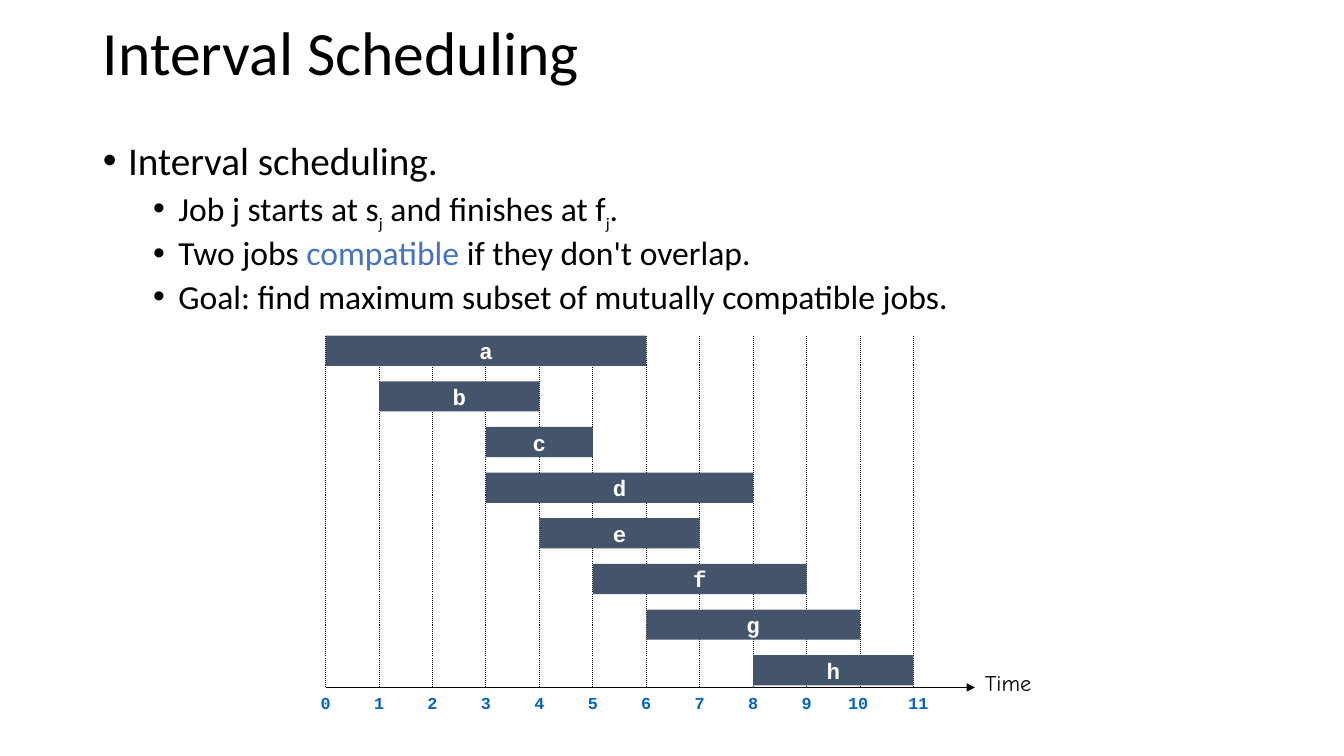
"""Build the Interval Scheduling slide with its job timeline."""
from lxml.etree import SubElement
from pptx import Presentation
from pptx.dml.color import RGBColor
from pptx.enum.dml import MSO_LINE
from pptx.enum.shapes import MSO_CONNECTOR as Link, MSO_SHAPE as Preset
from pptx.enum.text import MSO_ANCHOR as Anchor, MSO_AUTO_SIZE as Fit, PP_ALIGN as Align
from pptx.oxml.ns import qn
from pptx.util import Inches, Pt

COLORS = {"ink": "000000", "accent": "4472C4", "tick": "0563C1", "bar": "44546A", "label": "FFFFFF"}
WIDTH, HEIGHT = 13.33, 7.5
CHART_LEFT, CHART_TOP, COLUMN = 3.23, 3.33, 0.53
ROW = (6.5 - CHART_TOP) / 7
AXIS_ROW = (6.82 - CHART_TOP) / ROW
BAR_ROWS = 0.3 / ROW
JOBS = {"a": (0, 6), "b": (1, 4), "c": (3, 5), "d": (3, 8),
        "e": (4, 7), "f": (5, 9), "g": (6, 10), "h": (8, 11)}
LAST_TIME = max(finish for _, finish in JOBS.values())
POINTS = [
    (0, [("Interval scheduling.", "ink", False)]),
    (1, [("Job j starts at s", "ink", False), ("j", "ink", True),
         (" and finishes at f", "ink", False), ("j", "ink", True), (".", "ink", False)]),
    (1, [("Two jobs ", "ink", False), ("compatible ", "accent", False),
         ("if they don't overlap.", "ink", False)]),
    (1, [("Goal: find maximum subset of mutually compatible jobs.", "ink", False)]),
]


class TimelineSlide:
    """Holds the slide, its style and the timeline grid."""

    def __init__(self, deck):
        self.slide = deck.slides.add_slide(deck.slide_layouts[1])
        self.shapes = self.slide.shapes

    def color(self, name):
        return RGBColor.from_string(COLORS[name])

    def point(self, column, row):
        return Inches(CHART_LEFT + column * COLUMN), Inches(CHART_TOP + row * ROW)

    def cell(self, column, row, columns, rows):
        return *self.point(column, row), Inches(columns * COLUMN), Inches(rows * ROW)

    def add_words(self, paragraph, words, size, color="ink", font="Calibri", bold=False):
        run = paragraph.add_run()
        run.text = words
        run.font.size, run.font.name, run.font.bold = Pt(size), font, bold
        run.font.color.rgb = self.color(color)
        return run

    def place(self, holder, left, top, width, height):
        holder.left, holder.width = Inches(left * WIDTH / 100), Inches(width * WIDTH / 100)
        holder.top, holder.height = Inches(top * HEIGHT / 100), Inches(height * HEIGHT / 100)
        holder.text_frame.auto_size = Fit.NONE
        return holder.text_frame

    def title(self, words):
        heading = self.place(self.shapes.title, 6.9, 1.73, 86.27, 11.2)
        heading.vertical_anchor = Anchor.MIDDLE
        line = heading.paragraphs[0]
        line.alignment, line.line_spacing = Align.LEFT, 0.9
        self.add_words(line, words, 44)

    def bullets(self, points):
        body = self.place(self.slide.placeholders[1], 6.9, 18, 86.27, 63.47)
        for index, (level, pieces) in enumerate(points):
            item = body.add_paragraph() if index else body.paragraphs[0]
            item.level, item.line_spacing = level, 0.9
            item.space_before = Pt(5 if level else 10)
            layout = item._p.get_or_add_pPr()
            layout.set("marL", str(Inches(0.25 + 0.5 * level)))
            layout.set("indent", str(Inches(-0.25)))
            SubElement(layout, qn("a:buFont")).set("typeface", "Arial")
            SubElement(layout, qn("a:buChar")).set("char", "•")
            for words, color, subscript in pieces:
                size = 20 if subscript else 24 if level else 28
                run = self.add_words(item, words, size, color)
                if subscript:
                    run._r.get_or_add_rPr().set("baseline", "-25000")

    def line(self, start, end, weight, dotted=False, arrow=False):
        rule = self.shapes.add_connector(Link.STRAIGHT, *self.point(*start), *self.point(*end))
        rule.line.width, rule.line.color.rgb = Pt(weight), self.color("ink")
        if dotted:
            rule.line.dash_style = MSO_LINE.ROUND_DOT
        outline = rule.element.spPr
        if arrow:
            SubElement(outline.find(qn("a:ln")), qn("a:tailEnd")).set("type", "triangle")
        SubElement(outline, qn("a:effectLst"))

    def caption(self, words, area, size, color, font, bold=False):
        frame = self.shapes.add_textbox(*self.cell(*area)).text_frame
        frame.word_wrap = True
        self.add_words(frame.paragraphs[0], words, size, color, font, bold)

    def job(self, name, row, start, finish):
        bar = self.shapes.add_shape(Preset.RECTANGLE, *self.cell(start, row, finish - start, BAR_ROWS))
        bar.shadow.inherit = False
        bar.fill.solid()
        bar.fill.fore_color.rgb = self.color("bar")
        bar.line.fill.background()
        frame = bar.text_frame
        frame.word_wrap, frame.vertical_anchor = False, Anchor.MIDDLE
        frame.paragraphs[0].alignment = Align.CENTER
        self.add_words(frame.paragraphs[0], name, 16, "label", "Courier New", True)


def main():
    deck = Presentation()
    deck.slide_width, deck.slide_height = Inches(WIDTH), Inches(HEIGHT)
    page = TimelineSlide(deck)
    page.title("Interval Scheduling")
    page.bullets(POINTS)
    axis_end = 12.15
    page.line((0, AXIS_ROW), (axis_end, AXIS_ROW), 1.25, arrow=True)
    page.caption("Time", (axis_end, AXIS_ROW - 0.5, 1.57, 0.82), 16, "ink", "Comic Neue")
    for time in range(LAST_TIME + 1):
        page.line((time, AXIS_ROW), (time, 0), 0.75, dotted=True)
        label_column = time - (0.41 if time == 10 else 0.28)
        page.caption(str(time), (label_column, AXIS_ROW, 0.85, 0.66), 12, "tick", "Courier New", True)
    for row, (name, (start, finish)) in enumerate(JOBS.items()):
        page.job(name, row, start, finish)
    deck.save("out.pptx")


if __name__ == "__main__":
    main()
